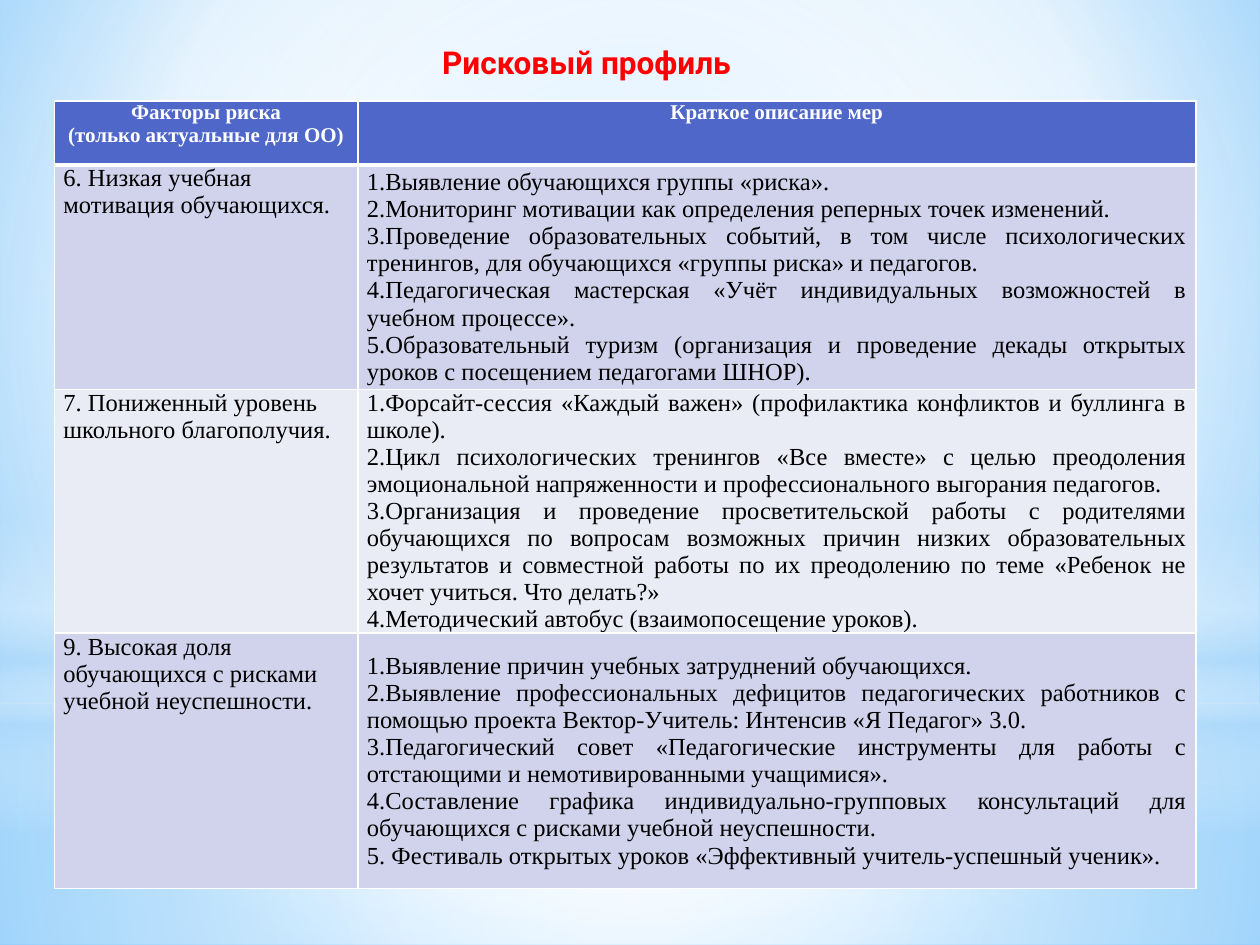
from lxml.etree import SubElement
from pptx import Presentation
from pptx.dml.color import RGBColor
from pptx.enum.shapes import MSO_SHAPE as Shape
from pptx.enum.text import MSO_ANCHOR as Anchor, MSO_AUTO_SIZE as AutoSize, PP_ALIGN as Align
from pptx.oxml.ns import qn
from pptx.util import Pt

THEME = {
    "title": "FF0000", "header": "4E67C8", "bands": ["D0D3EB", "E9EBF5"],
    "white": "FFFFFF", "text": "000000", "sky": "B4DCFA",
    "sky_light": "9ED5FF", "sky_deep": "5BB9FF",
    "title_font": "Roboto", "table_font": "Times New Roman",
    "title_size": 18, "header_size": 12, "body_size": 14,
}
WHITE, SKY = THEME["white"], THEME["sky"]
CENTER_FOCUS = (50, 50, 50, 50)


def fill_gradient(fill, element, stops, focus=None):
    """Stops are (percent, colour, opacity); without a focus the gradient runs downwards."""
    fill.gradient()
    gradient = element.find(".//" + qn("a:gradFill"))
    for child in list(gradient):
        gradient.remove(child)
    stop_list = SubElement(gradient, qn("a:gsLst"))
    for position, color, opacity in stops:
        stop = SubElement(stop_list, qn("a:gs"), pos=str(position * 1000))
        color_element = SubElement(stop, qn("a:srgbClr"), val=color)
        if opacity < 100:
            SubElement(color_element, qn("a:alpha"), val=str(opacity * 1000))
    if focus is None:
        SubElement(gradient, qn("a:lin"), ang="5400000", scaled="0")
    else:
        circle = SubElement(gradient, qn("a:path"), path="circle")
        sides = {side: str(value * 1000) for side, value in zip("ltrb", focus)}
        SubElement(circle, qn("a:fillToRect"), **sides)


def format_text(text_frame, font_name, size, color, bold, alignment):
    for paragraph in text_frame.paragraphs:
        paragraph.alignment = alignment
        for run in paragraph.runs:
            run.font.name = font_name
            run.font.size = Pt(size)
            run.font.bold = bold
            run.font.color.rgb = RGBColor.from_string(color)


presentation = Presentation()
presentation.slide_width, presentation.slide_height = Pt(720), Pt(540)
slide = presentation.slides.add_slide(presentation.slide_layouts[5])

# Sky background with soft light
fill_gradient(slide.background.fill, slide.element,
              [(0, THEME["sky_light"], 100), (60, WHITE, 100), (100, THEME["sky_deep"], 100)],
              (20, 10, 20, 60))
sky_layers = [
    (Shape.RECTANGLE, 401.76, 138.24,
     [(0, WHITE, 91), (37, WHITE, 76), (100, SKY, 79)], CENTER_FOCUS),
    (Shape.RECTANGLE, 0, 401.76,
     [(0, WHITE, 89), (48, WHITE, 62), (100, SKY, 79)], CENTER_FOCUS),
    (Shape.RECTANGLE, 296.64, 180,
     [(0, WHITE, 0), (29, WHITE, 30), (45, SKY, 40), (55, WHITE, 26), (65, SKY, 60),
      (100, WHITE, 0)], None),
    (Shape.OVAL, 126, 401.76, [(0, WHITE, 100), (56, WHITE, 0)], CENTER_FOCUS),
]
for preset, top, height, stops, focus in sky_layers:
    shape = slide.shapes.add_shape(preset, 0, Pt(top), Pt(720), Pt(height))
    shape.shadow.inherit = False
    shape.line.fill.background()
    fill_gradient(shape.fill, shape.element, stops, focus)

# Risk table: a factor and its measures in each row
rows = [
    (["Факторы риска", "(только актуальные для ОО)"], ["Краткое описание мер"]),
    (["6. Низкая учебная мотивация обучающихся."], [
        "1.Выявление обучающихся группы «риска».",
        "2.Мониторинг мотивации как определения реперных точек изменений.",
        "3.Проведение образовательных событий, в том числе психологических тренингов, "
        "для обучающихся «группы риска» и педагогов.",
        "4.Педагогическая мастерская «Учёт индивидуальных возможностей в учебном процессе».",
        "5.Образовательный туризм (организация и проведение декады открытых уроков "
        "с посещением педагогами ШНОР).",
    ]),
    (["7. Пониженный уровень школьного благополучия."], [
        "1.Форсайт-сессия «Каждый важен» (профилактика конфликтов и буллинга в школе).",
        "2.Цикл психологических тренингов «Все вместе» с целью преодоления "
        "эмоциональной напряженности и профессионального выгорания педагогов.",
        "3.Организация и проведение просветительской работы с родителями обучающихся "
        "по вопросам возможных причин низких образовательных результатов и совместной "
        "работы по их преодолению по теме «Ребенок не хочет учиться. Что делать?»",
        "4.Методический автобус (взаимопосещение уроков).",
    ]),
    (["9. Высокая доля обучающихся с рисками учебной неуспешности."], [
        "1.Выявление причин учебных затруднений обучающихся.",
        "2.Выявление профессиональных дефицитов педагогических работников с помощью "
        "проекта Вектор-Учитель: Интенсив «Я Педагог» 3.0.",
        "3.Педагогический совет «Педагогические инструменты для работы с отстающими "
        "и немотивированными учащимися».",
        "4.Составление графика индивидуально-групповых консультаций для обучающихся "
        "с рисками учебной неуспешности.",
        "5. Фестиваль открытых уроков «Эффективный учитель-успешный ученик».",
    ]),
]
column_widths = [173.5, 478.8]
row_heights = [36.7, 128.2, 139.4, 146]
table = slide.shapes.add_table(len(rows), 2, Pt(31), Pt(57.6),
                               Pt(sum(column_widths)), Pt(sum(row_heights))).table
for column, width in zip(table.columns, column_widths):
    column.width = Pt(width)

for row_index, (row, height) in enumerate(zip(rows, row_heights)):
    table.rows[row_index].height = Pt(height)
    is_header = row_index == 0
    for column_index, lines in enumerate(row):
        cell = table.cell(row_index, column_index)
        cell.margin_left = cell.margin_right = Pt(5.2)
        cell.margin_top = cell.margin_bottom = 0
        is_measures = column_index == 1 and not is_header
        cell.vertical_anchor = Anchor.MIDDLE if is_measures else Anchor.TOP

        cell_properties = cell._tc.get_or_add_tcPr()
        for side in "LRTB":
            thick = (is_header and side == "B") or (row_index == 1 and side == "T")
            border = SubElement(cell_properties, qn("a:ln" + side), w=str(Pt(3 if thick else 1)))
            SubElement(SubElement(border, qn("a:solidFill")), qn("a:srgbClr"), val=WHITE)
        cell.fill.solid()
        band = THEME["header"] if is_header else THEME["bands"][(row_index - 1) % 2]
        cell.fill.fore_color.rgb = RGBColor.from_string(band)

        cell.text_frame.text = "\n".join(lines)
        if is_header:
            alignment = Align.CENTER
        else:
            alignment = Align.JUSTIFY if is_measures else Align.LEFT
        format_text(cell.text_frame, THEME["table_font"],
                    THEME["header_size"] if is_header else THEME["body_size"],
                    WHITE if is_header else THEME["text"], is_header, alignment)

# Title, brought in front of the sky
title = slide.shapes.title
slide.shapes._spTree.append(title.element)
title.left, title.top, title.width, title.height = Pt(243.4), Pt(20.9), Pt(183.6), Pt(28.8)
title.text_frame.text = "Рисковый профиль"
title.text_frame.word_wrap = False
title.text_frame.auto_size = AutoSize.SHAPE_TO_FIT_TEXT
title.text_frame.vertical_anchor = Anchor.TOP
format_text(title.text_frame, THEME["title_font"], THEME["title_size"],
            THEME["title"], True, Align.CENTER)

presentation.save("out.pptx")
